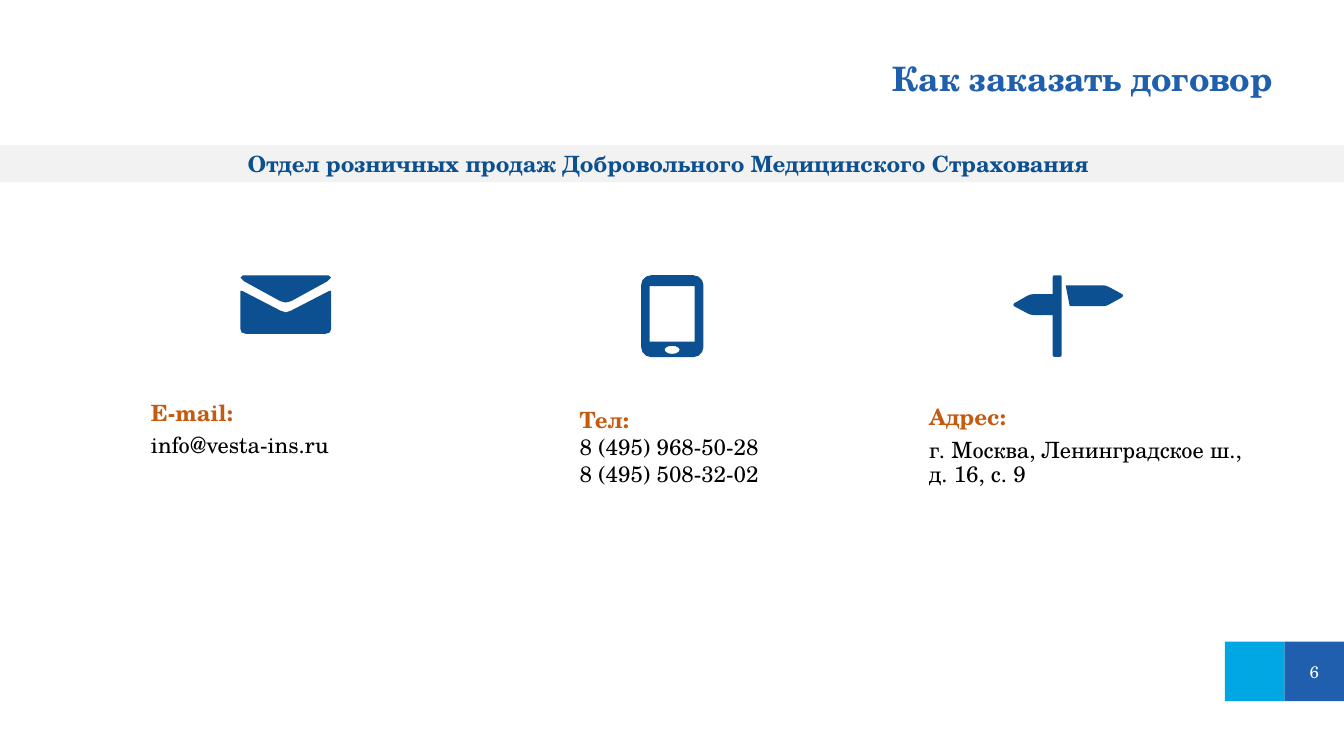
import math

from pptx import Presentation
from pptx.dml.color import RGBColor
from pptx.enum import shapes, text
from pptx.util import Pt

FONT = "TeX Gyre Schola"
BLUE = RGBColor(0x1F, 0x5F, 0xAD)
CYAN = RGBColor(0x00, 0xA7, 0xE2)
NAVY = RGBColor(0x0C, 0x50, 0x91)
ORANGE = RGBColor(0xC5, 0x5A, 0x11)
GREY = RGBColor(0xF2, 0xF2, 0xF2)
BLACK = RGBColor(0, 0, 0)
WHITE = RGBColor(255, 255, 255)

SLIDE_W, SLIDE_H = 960, 540
TITLE = "Как заказать договор"
DEPARTMENT = "Отдел розничных продаж Добровольного Медицинского Страхования"
PAGE = "6"

# heading, lines, (left, top, width, height), paragraph format
SPACED = {"indent": 7.2, "leading": 0.9, "before": 6}
CONTACTS = [
    ("E-mail:", ["info@vesta-ins.ru"], (93.6, 283.7, 152, 48.2), SPACED),
    ("Тел:", ["8 (495) 968-50-28", "8 (495) 508-32-02"],
     (407, 286.7, 148.3, 65.5), {}),
    ("Адрес:", ["г. Москва, Ленинградское ш., д. 16, с. 9"],
     (649.4, 286.7, 247, 66.2), SPACED),
]


def rounded(left, top, right, bottom, rx=0, ry=0):
    """Outline of a rectangle with elliptical corners."""
    if not rx:
        return [(left, top), (right, top), (right, bottom), (left, bottom)]
    centres = [(right - rx, bottom - ry), (left + rx, bottom - ry),
               (left + rx, top + ry), (right - rx, top + ry)]
    return [(x + rx * math.cos(math.radians(90 * corner + step)),
             y + ry * math.sin(math.radians(90 * corner + step)))
            for corner, (x, y) in enumerate(centres)
            for step in range(0, 91, 30)]


def flatten(outline):
    """Turn (control x, control y, x, y) curves into two straight steps."""
    points = []
    for node in outline:
        if len(node) == 2:
            points.append(node)
            continue
        (x0, y0), (cx, cy, x1, y1) = points[-1], node
        points.append(((x0 + 2 * cx + x1) / 4, (y0 + 2 * cy + y1) / 4))
        points.append((x1, y1))
    return points


ENVELOPE = [
    [(65, 12), (65, 38), (65, 41.8, 61, 41.8), (4, 41.8), (0, 41.8, 0, 38),
     (0, 12), (0, 10.5, 1.5, 11.2), (28.6, 25.2), (32.5, 27.8, 36.4, 25.2),
     (63.5, 11.2), (65, 10.5, 65, 12)],
    [(2, 0), (63, 0), (67, 1.2, 62.3, 4.3), (36.4, 18.5),
     (32.5, 20.5, 28.6, 18.5), (2.7, 4.3), (-2, 1.2, 2, 0)],
]
PHONE = [
    rounded(0, 0, 44.6, 58.5, 7.2, 7.2),
    rounded(6.1, 7.9, 38.3, 47.5),
    rounded(16.8, 50.4, 27.6, 56.2, 5.4, 2.9),
]
SIGNPOST = [
    [(34.6, 1.4), (34.6, 56.9), (34.6, 58.3, 33.2, 58.3), (29.5, 58.3),
     (28.1, 58.3, 28.1, 56.9), (28.1, 28.4), (14.4, 28.4),
     (12.2, 28.4, 10.1, 27.2), (0.7, 22.2), (-0.7, 21, 0.7, 20), (10.1, 14.6),
     (12.2, 13.5, 14.4, 13.5), (28.1, 13.5), (28.1, 1.4),
     (28.1, 0, 29.5, 0), (33.2, 0), (34.6, 0, 34.6, 1.4)],
    [(37.4, 7.2), (64.1, 7.2), (66.2, 7.2, 68.4, 8.4), (77.8, 13.5),
     (79.2, 14.6, 77.8, 15.7), (68.4, 20.9), (66.2, 22.1, 64.1, 22.1),
     (40.3, 22.1)],
]
ICON_TOP = 196.6
ICONS = [(723.8, SIGNPOST), (171.6, ENVELOPE), (457.9, PHONE)]


def place(shape, box):
    shape.left, shape.top, shape.width, shape.height = map(Pt, box)
    return shape


def paint(shape, color):
    shape.shadow.inherit = False
    shape.fill.solid()
    shape.fill.fore_color.rgb = color
    shape.line.fill.background()
    return shape


def write(frame, line, size=16, color=BLACK, bold=False, align=text.PP_ALIGN.LEFT,
          indent=0, leading=None, before=0, first=True):
    paragraph = frame.paragraphs[0] if first else frame.add_paragraph()
    paragraph.alignment = align
    if indent:
        properties = paragraph._p.get_or_add_pPr()
        properties.set("marL", str(Pt(indent)))
        properties.set("indent", "0")
    if leading:
        paragraph.line_spacing = leading
    paragraph.space_before = Pt(0 if first else before)
    run = paragraph.add_run()
    run.text = line
    run.font.name, run.font.size, run.font.bold = FONT, Pt(size), bold
    run.font.color.rgb = color


def set_frame(frame, anchor=text.MSO_ANCHOR.TOP, sides=(7.2, 7.2), ends=3.6):
    frame.word_wrap = True
    frame.auto_size = text.MSO_AUTO_SIZE.NONE
    frame.vertical_anchor = anchor
    frame.margin_left, frame.margin_right = map(Pt, sides)
    frame.margin_top = frame.margin_bottom = Pt(ends)
    return frame


def add_rectangle(slide, box, color):
    return paint(slide.shapes.add_shape(
        shapes.MSO_SHAPE.RECTANGLE, *map(Pt, box)), color)


def add_icon(slide, left, outlines):
    builder = None
    for outline in outlines:
        points = [(Pt(left + x), Pt(ICON_TOP + y)) for x, y in flatten(outline)]
        if builder is None:
            builder = slide.shapes.build_freeform(*points[0])
        else:
            builder.move_to(*points[0])
        builder.add_line_segments(points[1:], close=True)
    paint(builder.convert_to_shape(), NAVY)


def main():
    deck = Presentation()
    deck.slide_width, deck.slide_height = Pt(SLIDE_W), Pt(SLIDE_H)
    slide = deck.slides.add_slide(deck.slide_layouts[5])

    title = place(slide.shapes.title, (447.5, 36.7, 470.4, 37.4))
    write(set_frame(title.text_frame, sides=(8.64, 8.64), ends=4.32), TITLE,
          size=24, color=BLUE, bold=True, align=text.PP_ALIGN.RIGHT)

    tile, tile_top = 42.5, 458.4
    page = add_rectangle(slide, (SLIDE_W - tile, tile_top, tile, tile), BLUE)
    write(set_frame(page.text_frame, text.MSO_ANCHOR.MIDDLE), PAGE, size=12,
          color=WHITE, align=text.PP_ALIGN.CENTER)
    add_rectangle(slide, (SLIDE_W - 2 * tile, tile_top, tile, tile), CYAN)

    for left, outlines in ICONS:
        add_icon(slide, left, outlines)

    band = add_rectangle(slide, (0, 103.6, SLIDE_W, 26.6), GREY)
    write(set_frame(band.text_frame, text.MSO_ANCHOR.MIDDLE, sides=(7.2, 11.8)),
          DEPARTMENT, color=NAVY, bold=True, align=text.PP_ALIGN.CENTER)

    for heading, lines, box, layout in CONTACTS:
        frame = set_frame(slide.shapes.add_textbox(*map(Pt, box)).text_frame)
        write(frame, heading, color=ORANGE, bold=True, **layout)
        for line in lines:
            write(frame, line, first=False, **layout)

    deck.save("out.pptx")


if __name__ == "__main__":
    main()
